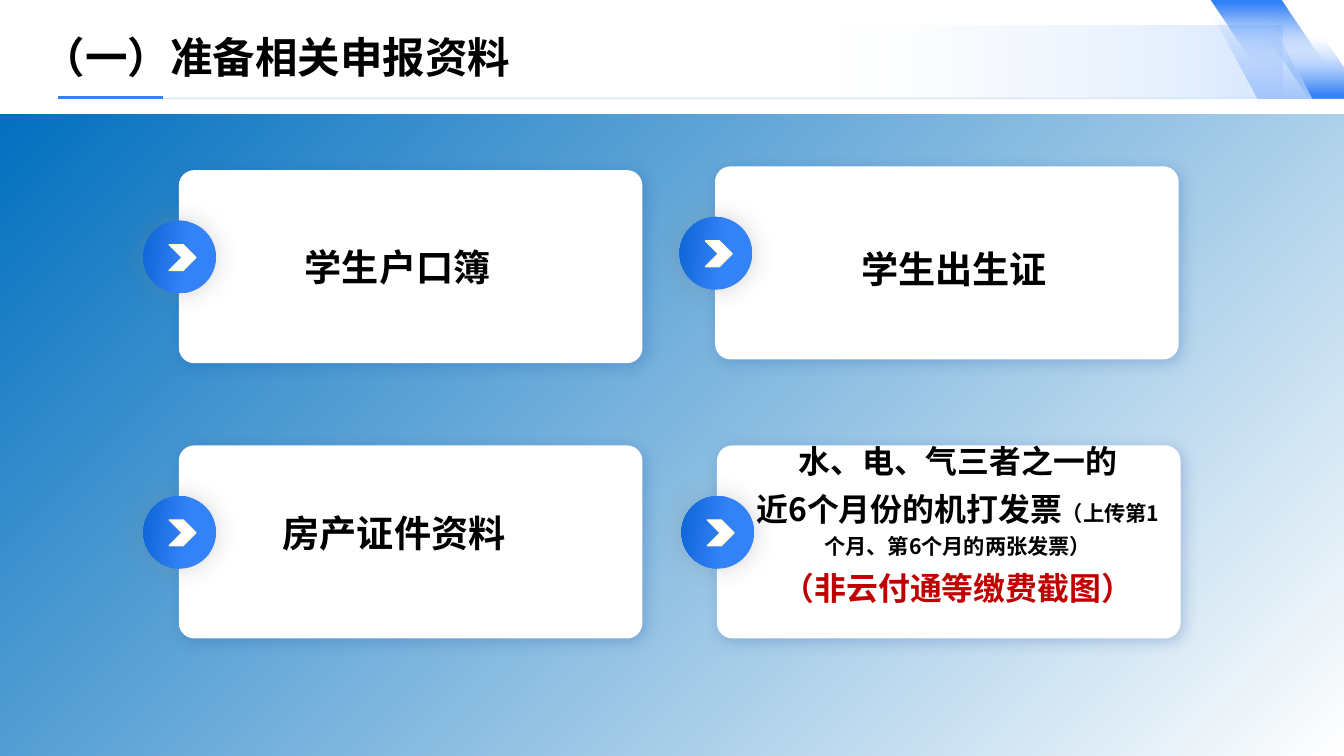
from dataclasses import dataclass
from typing import NamedTuple, Optional

from lxml.etree import SubElement
from pptx import Presentation
from pptx.dml.color import RGBColor
from pptx.enum.shapes import MSO_CONNECTOR, MSO_SHAPE
from pptx.enum.text import MSO_ANCHOR as Anchor, PP_ALIGN as Align
from pptx.oxml.ns import qn
from pptx.util import Emu, Inches, Pt


@dataclass(frozen=True)
class Theme:
    backdrop: str = "0070C0"
    blue: str = "3482F8"
    deep: str = "0D65D4"
    pale: str = "A3C6FC"
    white: str = "FFFFFF"
    cream: str = "FFFED2"
    ink: str = "000000"
    alert: str = "C00000"
    card_shade: str = "1146A2"
    badge_shade: str = "808080"
    latin: str = "Arial"
    chinese: str = "Noto Sans CJK SC"
    title_size: int = 32
    label_size: int = 28
    detail_size: int = 24
    note_size: int = 16


class Box(NamedTuple):
    """Left, top, width and height in percent of the slide."""
    x: float
    y: float
    w: float
    h: float


class Stop(NamedTuple):
    position: int
    color: str
    alpha: int = 100


class Gradient(NamedTuple):
    """Two stops; the angle turns clockwise from left-to-right."""
    start: Stop
    end: Stop
    angle: int


class Shadow(NamedTuple):
    color: str
    alpha: int
    blur: int
    distance: int
    direction: int


class Run(NamedTuple):
    text: str
    size: int
    color: str


class Card(NamedTuple):
    x: float
    y: float
    text_box: Box
    paragraphs: list[list[Run]]
    detailed: bool = False


class Rule(NamedTuple):
    x1: float
    x2: float
    y: float
    color: str
    width: int
    alpha: int = 100


class Ribbon(NamedTuple):
    corners: list[tuple[float, float]]
    gradient: Gradient


T = Theme()
deck = Presentation()
deck.slide_width, deck.slide_height = Inches(14.06), Inches(7.91)
slide = deck.slides.add_slide(deck.slide_layouts[6])


def across(share: float) -> Emu:
    return Emu(round(deck.slide_width * share / 100))


def down(share: float) -> Emu:
    return Emu(round(deck.slide_height * share / 100))


def place(box: Box) -> tuple[Emu, Emu, Emu, Emu]:
    return across(box.x), down(box.y), across(box.w), down(box.h)


def set_alpha(color_element, percent: int) -> None:
    if percent < 100:
        SubElement(color_element, qn("a:alpha")).set("val", str(percent * 1000))


def paint(shape, fill: str | Gradient) -> None:
    if isinstance(fill, str):
        shape.fill.solid()
        shape.fill.fore_color.rgb = RGBColor.from_string(fill)
        return
    shape.fill.gradient()
    shape.fill.gradient_angle = -fill.angle % 360
    for stop, wanted in zip(shape.fill.gradient_stops, fill[:2]):
        stop.position = wanted.position / 100
        stop.color.rgb = RGBColor.from_string(wanted.color)
    colors = shape._element.spPr.iter(qn("a:srgbClr"))
    for color, wanted in zip(list(colors), fill[:2]):
        set_alpha(color, wanted.alpha)


def finish(shape, fill: str | Gradient, shadow: Optional[Shadow] = None) -> None:
    """Fill a shape, drop its outline and give it only the stated shadow."""
    shape.line.fill.background()
    paint(shape, fill)
    shape.shadow.inherit = False
    if shadow:
        effects = shape._element.spPr.find(qn("a:effectLst"))
        outer = SubElement(effects, qn("a:outerShdw"))
        values = {"blurRad": Pt(shadow.blur), "dist": Pt(shadow.distance),
                  "dir": shadow.direction * 60000, "algn": "ctr", "rotWithShape": 0}
        for name, value in values.items():
            outer.set(name, str(value))
        color = SubElement(outer, qn("a:srgbClr"))
        color.set("val", shadow.color)
        set_alpha(color, shadow.alpha)


def add_preset(kind: MSO_SHAPE, box: Box, fill: str | Gradient,
               shadow: Optional[Shadow] = None):
    shape = slide.shapes.add_shape(kind, *place(box))
    finish(shape, fill, shadow)
    return shape


def add_rule(rule: Rule) -> None:
    line = slide.shapes.add_connector(MSO_CONNECTOR.STRAIGHT, across(rule.x1), down(rule.y),
                                      across(rule.x2), down(rule.y))
    line.line.width = Pt(rule.width)
    line.line.color.rgb = RGBColor.from_string(rule.color)
    properties = line._element.spPr
    set_alpha(next(properties.iter(qn("a:srgbClr"))), rule.alpha)
    SubElement(properties, qn("a:effectLst"))


def add_text(box: Box, paragraphs: list[list[Run]], font: str,
             frame_format: dict, paragraph_format: dict) -> None:
    frame = slide.shapes.add_textbox(*place(box)).text_frame
    for name, value in frame_format.items():
        setattr(frame, name, value)
    for index, runs in enumerate(paragraphs):
        paragraph = frame.add_paragraph() if index else frame.paragraphs[0]
        for name, value in paragraph_format.items():
            setattr(paragraph, name, value)
        for piece in runs:
            run = paragraph.add_run()
            run.text = piece.text
            for name, value in {"name": font, "size": Pt(piece.size), "bold": True}.items():
                setattr(run.font, name, value)
            run.font.color.rgb = RGBColor.from_string(piece.color)
            SubElement(run._r.rPr, qn("a:ea")).set("typeface", T.chinese)


LABEL_FRAME = {"word_wrap": True, "vertical_anchor": Anchor.MIDDLE}
DETAIL_FRAME = {"word_wrap": True, "vertical_anchor": Anchor.TOP}
DETAIL_PARAGRAPH = {"alignment": Align.CENTER, "line_spacing": 1.24}
CARD_SHADOW = Shadow(T.card_shade, 24, 12, 3, 45)
BADGE_SHADOW = Shadow(T.badge_shade, 32, 18, 0, 358)
BADGE_FILL = Gradient(Stop(41, T.blue), Stop(100, T.deep), 188)


def add_card(card: Card) -> None:
    """Draw a white card with a round arrow badge on its left edge and its text."""
    panel = add_preset(MSO_SHAPE.ROUNDED_RECTANGLE, Box(card.x, card.y, 34.5, 25.54),
                       T.white, CARD_SHADOW)
    panel.adjustments[0] = 0.08
    add_preset(MSO_SHAPE.OVAL, Box(card.x - 2.63, card.y + 6.7, 5.41, 9.61),
               BADGE_FILL, BADGE_SHADOW)
    arrow = add_preset(MSO_SHAPE.CHEVRON, Box(card.x - 0.71, card.y + 9.86, 1.99, 3.41), T.white)
    arrow.line.color.rgb = RGBColor.from_string(T.cream)
    arrow.line.width = Pt(1)
    add_text(card.text_box, card.paragraphs, T.chinese,
             DETAIL_FRAME if card.detailed else LABEL_FRAME,
             DETAIL_PARAGRAPH if card.detailed else {})


def add_ribbon(ribbon: Ribbon) -> None:
    corners = [(across(x), down(y)) for x, y in ribbon.corners]
    outline = slide.shapes.build_freeform(*corners[0])
    outline.add_line_segments(corners[1:], close=True)
    finish(outline.convert_to_shape(), ribbon.gradient)


def label(text: str) -> list[list[Run]]:
    return [[Run(text, T.label_size, T.ink)]]


RULES = [Rule(12.02, 95.16, 13.02, T.pale, 1, 40), Rule(4.34, 12.16, 12.9, T.blue, 3)]
INVOICES = [
    [Run("水、电、气三者之一的", T.detail_size, T.ink)],
    [Run("近6个月份的机打发票", T.detail_size, T.ink),
     Run("（上传第1个月、第6个月的两张发票）", T.note_size, T.ink)],
    [Run("（非云付通等缴费截图）", T.detail_size, T.alert)],
]
CARDS = [
    Card(13.3, 22.5, Box(21.98, 31.61, 16.57, 7.21), label("学生户口簿")),
    Card(53.2, 22, Box(63.37, 31.86, 17, 7.21), label("学生出生证")),
    Card(13.3, 58.91, Box(20.34, 66.88, 21.27, 7.21), label("房产证件资料")),
    Card(53.34, 58.91, Box(55.26, 56.64, 32.01, 31.61), INVOICES, detailed=True),
]
FADE = (Stop(35, T.pale, 0), Stop(96, T.blue))
RIBBONS = [
    Ribbon([(97.37, 13.02), (92.67, 0.51), (96.73, 0.51), (100, 9.1), (100, 13.02)],
           Gradient(*FADE, 90)),
    Ribbon([(95.09, 13.15), (90.11, 0), (95.31, 0), (100, 12.4), (100, 13.15)],
           Gradient(*FADE, 270)),
    Ribbon([(94.24, 1.77), (97.58, 13.02), (93.53, 13.02), (90.11, 1.77)],
           Gradient(Stop(0, T.pale, 0), Stop(100, T.pale), 90)),
]

add_preset(MSO_SHAPE.RECTANGLE, Box(0, 15.17, 100, 84.83),
           Gradient(Stop(0, T.backdrop, 0), Stop(100, T.backdrop), 225))
add_preset(MSO_SHAPE.RECTANGLE, Box(34.07, 3.41, 61.38, 9.48),
           Gradient(Stop(46, T.pale, 0), Stop(100, T.blue, 19), 0))
for header_rule in RULES:
    add_rule(header_rule)
add_text(Box(2.49, 3.41, 92.75, 8.09), [[Run("（一）准备相关申报资料", T.title_size, T.ink)]],
         T.latin, LABEL_FRAME, {})
for document in CARDS:
    add_card(document)
for corner_ribbon in RIBBONS:
    add_ribbon(corner_ribbon)
deck.save("out.pptx")
